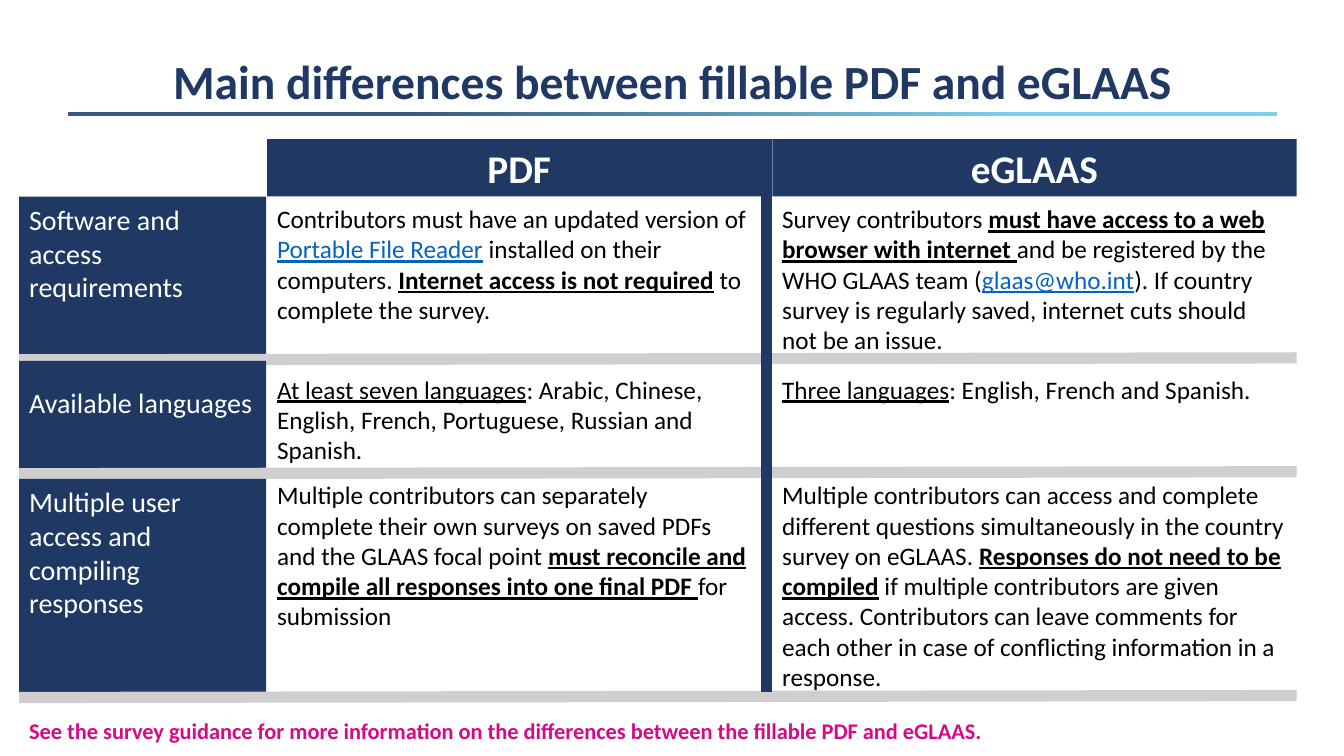
from lxml import etree
from pptx import Presentation
from pptx.dml.color import RGBColor
from pptx.enum.shapes import MSO_CONNECTOR, MSO_SHAPE
from pptx.enum.text import MSO_ANCHOR, PP_ALIGN
from pptx.oxml.ns import qn
from pptx.util import Inches, Pt

STRAIGHT = MSO_CONNECTOR.STRAIGHT
RECTANGLE = MSO_SHAPE.RECTANGLE
TOP, BOTTOM = MSO_ANCHOR.TOP, MSO_ANCHOR.BOTTOM
LEFT, CENTER = PP_ALIGN.LEFT, PP_ALIGN.CENTER

FONT = "Calibri"
COLORS = {
    "navy": "203864",
    "white": "FFFFFF",
    "black": "000000",
    "gray": "D0CECE",
    "link": "0563C1",
    "pink": "D60A87",
    "rule_start": "375987",
    "rule_end": "7BD0EF",
}
STYLES = {
    "plain": ("black", False, False),
    "strong": ("black", True, True),
    "underlined": ("black", False, True),
    "link": ("link", False, True),
}

LABEL_LEFT, PDF_LEFT, EGLAAS_LEFT, TABLE_RIGHT = 0.19, 2.65, 7.66, 12.86
LABEL_WIDTH, PDF_WIDTH = 2.45, 4.88
EGLAAS_WIDTH = TABLE_RIGHT - EGLAAS_LEFT
HEADER_TOP, HEADER_HEIGHT = 1.38, 0.57
DIVIDER_X, DIVIDER_BOTTOM = 7.6, 6.87

ROWS = [
    {
        "label": "Software and access requirements",
        "label_top": 1.95, "label_height": 1.65, "label_inset": 0.06,
        "text_top": 1.97, "text_height": 1.62, "pdf_width": PDF_WIDTH, "rule_y": 3.55,
        "pdf": [
            ("Contributors must have an updated version of ", "plain"),
            ("Portable File Reader", "link"),
            (" installed on their computers. ", "plain"),
            ("Internet access is not required", "strong"),
            (" to complete the survey.", "plain"),
        ],
        "eglaas": [
            ("Survey contributors ", "plain"),
            ("must have access to a web browser with internet ", "strong"),
            ("and be registered by the WHO GLAAS team (", "plain"),
            ("glaas@who.int", "link"),
            ("). If country survey is regularly saved, internet cuts should not be an issue.", "plain"),
        ],
    },
    {
        "label": "Available languages",
        "label_top": 3.58, "label_height": 1.11, "label_inset": 0.24,
        "text_top": 3.66, "text_height": 1.01, "pdf_width": 5, "rule_y": 4.68,
        "pdf": [
            ("At least seven languages", "underlined"),
            (": Arabic, Chinese, English, French, Portuguese, Russian and Spanish.", "plain"),
        ],
        "eglaas": [
            ("Three languages", "underlined"),
            (": English, French and Spanish.", "plain"),
        ],
    },
    {
        "label": "Multiple user access and compiling responses",
        "label_top": 4.75, "label_height": 2.12, "label_inset": 0.06,
        "text_top": 4.71, "text_height": 2.22, "pdf_width": PDF_WIDTH, "rule_y": 6.9,
        "pdf": [
            ("Multiple contributors can separately complete their own surveys on saved PDFs "
             "and the GLAAS focal point ", "plain"),
            ("must reconcile and compile all responses into one final PDF ", "strong"),
            ("for submission", "plain"),
        ],
        "eglaas": [
            ("Multiple contributors can access and complete different questions simultaneously "
             "in the country survey on eGLAAS. ", "plain"),
            ("Responses do not need to be compiled", "strong"),
            (" if multiple contributors are given access. Contributors can leave comments "
             "for each other in case of conflicting information in a response.", "plain"),
        ],
    },
]


def color(name):
    return RGBColor.from_string(COLORS[name])


def format_font(font, size, color_name, bold=False, underline=False):
    font.name = FONT
    font.size = Pt(size)
    font.bold = bold
    font.underline = underline
    font.color.rgb = color(color_name)


def add_title(slide, text):
    title = slide.shapes.title
    title.left, title.top = Inches(0.67), Inches(0.22)
    title.width, title.height = Inches(12), Inches(0.92)
    text_frame = title.text_frame
    text_frame.text = text
    text_frame.vertical_anchor = BOTTOM
    paragraph = text_frame.paragraphs[0]
    paragraph.alignment = CENTER
    paragraph.line_spacing = 0.9
    format_font(paragraph.runs[0].font, 34, "navy", bold=True)


def add_rectangle(slide, left, top, width, height):
    shape = slide.shapes.add_shape(
        RECTANGLE, Inches(left), Inches(top), Inches(width), Inches(height))
    shape.shadow.inherit = False
    shape.line.fill.background()
    return shape


def add_title_rule(slide):
    fill = add_rectangle(slide, 0.67, 1.11, 12, 0.04).fill
    fill.gradient()
    fill.gradient_angle = 0
    stops = ((0.28, "rule_start"), (0.79, "rule_end"))
    for stop, (position, color_name) in zip(fill.gradient_stops, stops):
        stop.position = position
        stop.color.rgb = color(color_name)


def add_navy_box(slide, text, left, top, width, height, size, alignment, bold=False, inset=0.05):
    shape = add_rectangle(slide, left, top, width, height)
    shape.fill.solid()
    shape.fill.fore_color.rgb = color("navy")
    text_frame = shape.text_frame
    text_frame.word_wrap = True
    text_frame.vertical_anchor = TOP
    text_frame.margin_top = Inches(inset)
    text_frame.text = text
    paragraph = text_frame.paragraphs[0]
    paragraph.alignment = alignment
    format_font(paragraph.runs[0].font, size, "white", bold)


def add_text(slide, left, top, width, height):
    box = slide.shapes.add_textbox(Inches(left), Inches(top), Inches(width), Inches(height))
    box.text_frame.word_wrap = True
    return box.text_frame.paragraphs[0]


def add_cell_text(slide, parts, left, top, width, height):
    paragraph = add_text(slide, left, top, width, height)
    for text, style in parts:
        run = paragraph.add_run()
        run.text = text
        format_font(run.font, 18, *STYLES[style])


def add_line(slide, start_x, start_y, end_x, end_y, color_name):
    line = slide.shapes.add_connector(
        STRAIGHT, Inches(start_x), Inches(start_y), Inches(end_x), Inches(end_y))
    line.line.color.rgb = color(color_name)
    line.line.width = Pt(8)
    etree.SubElement(line._element.spPr, qn("a:effectLst"))


def add_row(slide, row):
    add_navy_box(slide, row["label"], LABEL_LEFT, row["label_top"], LABEL_WIDTH,
                 row["label_height"], 20, LEFT, inset=row["label_inset"])
    add_line(slide, TABLE_RIGHT, row["rule_y"], LABEL_LEFT, row["rule_y"] + 0.02, "gray")
    top, height = row["text_top"], row["text_height"]
    add_cell_text(slide, row["pdf"], PDF_LEFT, top, row["pdf_width"], height)
    add_cell_text(slide, row["eglaas"], EGLAAS_LEFT, top, EGLAAS_WIDTH, height)


def add_footnote(slide, text):
    paragraph = add_text(slide, 0.19, 7.07, 13, 0.37)
    paragraph.text = text
    format_font(paragraph.runs[0].font, 16, "pink", bold=True)


def main():
    presentation = Presentation()
    presentation.slide_width = Inches(13.33)
    presentation.slide_height = Inches(7.5)
    slide = presentation.slides.add_slide(presentation.slide_layouts[5])

    add_title_rule(slide)
    add_title(slide, "Main differences between fillable PDF and eGLAAS")
    for heading, left, width in (("PDF", PDF_LEFT, 5), ("eGLAAS", EGLAAS_LEFT, EGLAAS_WIDTH)):
        add_navy_box(slide, heading, left, HEADER_TOP, width, HEADER_HEIGHT, 28, CENTER, bold=True)
    for row in ROWS:
        add_row(slide, row)
    add_line(slide, DIVIDER_X, HEADER_TOP, DIVIDER_X, DIVIDER_BOTTOM, "navy")
    add_footnote(slide, "See the survey guidance for more information on the differences "
                        "between the fillable PDF and eGLAAS.")
    presentation.save("out.pptx")


if __name__ == "__main__":
    main()
